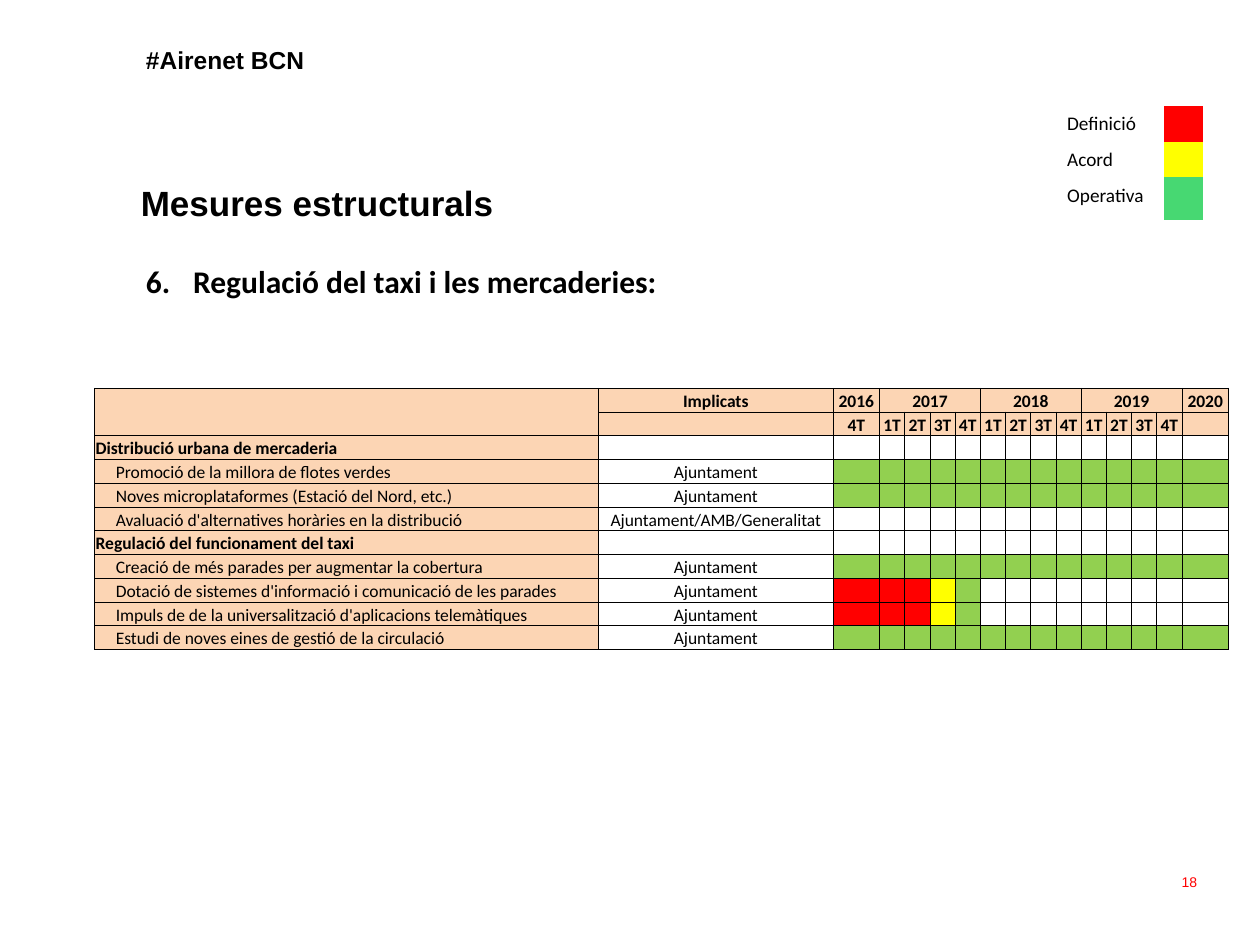
"""Build the slide with the schedule of taxi and freight regulation measures."""
from lxml.etree import SubElement
from pptx import Presentation
from pptx.dml.color import RGBColor
from pptx.enum.text import MSO_ANCHOR, PP_ALIGN
from pptx.oxml.ns import qn
from pptx.util import Pt

THEME = {
    "black": "000000", "red": "FF0000", "yellow": "FFFF00",
    "mint": "47D872", "green": "92D050", "peach": "FCD5B4",
    "heading": "Arial", "body": "Calibri",
    "tag_size": 14, "title_size": 20, "measure_size": 18,
    "legend_size": 11, "table_size": 10, "number_size": 8,
    "no_grid": "{2D5ABB26-0587-4C30-8999-92F81FD0307C}",
}
LEGEND = [("Definició", "red"), ("Acord", "yellow"), ("Operativa", "mint")]
YEARS = [("2016", ["4T"])] + [
    (year, ["1T", "2T", "3T", "4T"]) for year in ("2017", "2018", "2019")
] + [("2020", [""])]
QUARTERS = [quarter for _, quarters in YEARS for quarter in quarters]
ALWAYS = ["green"] * len(QUARTERS)
PHASED = ["red"] * 3 + ["yellow", "green"]
GROUPS = [
    ("Distribució urbana de mercaderia", [
        ("Promoció de la millora de flotes verdes", "Ajuntament", ALWAYS),
        ("Noves microplataformes (Estació del Nord, etc.)", "Ajuntament", ALWAYS),
        ("Avaluació d'alternatives horàries en la distribució",
         "Ajuntament/AMB/Generalitat", []),
    ]),
    ("Regulació del funcionament del taxi", [
        ("Creació de més parades per augmentar la cobertura", "Ajuntament", ALWAYS),
        ("Dotació de sistemes d'informació i comunicació de les parades",
         "Ajuntament", PHASED),
        ("Impuls de de la universalització d'aplicacions telemàtiques",
         "Ajuntament", PHASED),
        ("Estudi de noves eines de gestió de la circulació", "Ajuntament", ALWAYS),
    ]),
]


def put_text(frame, text, size, font="body", color="black", bold=False,
             align=PP_ALIGN.LEFT, spacing=None, number=None):
    """Write one formatted paragraph into a text frame."""
    para = frame.paragraphs[0]
    para.alignment = align
    if spacing:
        para.line_spacing = Pt(spacing)
    if number:
        properties = para._p.get_or_add_pPr()
        properties.set("marL", str(Pt(27)))
        properties.set("indent", str(Pt(-27)))
        SubElement(properties, qn("a:buAutoNum"), type="arabicPeriod", startAt=str(number))
    if not text:
        SubElement(para._p, qn("a:endParaRPr"), sz=str(THEME[size] * 100))
        return
    span = para.add_run()
    span.text = text
    span.font.size = Pt(THEME[size])
    span.font.name = THEME[font]
    span.font.bold = bold
    span.font.color.rgb = RGBColor.from_string(THEME[color])


def add_text(page, place, text, anchor=MSO_ANCHOR.TOP, **style):
    """Add a wrapping text box."""
    frame = page.shapes.add_textbox(*map(Pt, place)).text_frame
    frame.word_wrap = True
    frame.vertical_anchor = anchor
    put_text(frame, text, **style)


def add_grid(page, left, top, widths, heights):
    """Add an unstyled table with the given columns and rows."""
    frame = page.shapes.add_table(len(heights), len(widths), Pt(left), Pt(top),
                                  Pt(sum(widths)), Pt(sum(heights)))
    table = frame.table
    table.first_row = table.horz_banding = False
    table._tbl.tblPr.find(qn("a:tableStyleId")).text = THEME["no_grid"]
    for column, width in zip(table.columns, widths):
        column.width = Pt(width)
    for row, height in zip(table.rows, heights):
        row.height = Pt(height)
    return table


def fill_cell(cell, color):
    """Fill a cell, or leave it clear when no colour is given."""
    if color:
        cell.fill.solid()
        cell.fill.fore_color.rgb = RGBColor.from_string(THEME[color])
    else:
        cell.fill.background()


def add_borders(cell):
    """Draw thin black lines around a cell."""
    for side in ("lnL", "lnR", "lnT", "lnB"):
        line = SubElement(cell._tc.get_or_add_tcPr(), qn(f"a:{side}"), w=str(Pt(0.5)))
        SubElement(SubElement(line, qn("a:solidFill")), qn("a:srgbClr"), val=THEME["black"])


def set_cell(cell, text="", color=None, indent=0.7, **style):
    """Format one cell of the schedule."""
    add_borders(cell)
    fill_cell(cell, color)
    cell.margin_left = Pt(indent)
    cell.margin_right = cell.margin_top = Pt(0.7)
    cell.margin_bottom = Pt(0)
    cell.vertical_anchor = MSO_ANCHOR.BOTTOM
    put_text(cell.text_frame, text, size="table_size", **style)


def add_legend(page):
    """Add the colour key."""
    table = add_grid(page, 602.6, 60.5, [62.6, 22.3], [18, 18, 24.5])
    for row, (label, color) in enumerate(LEGEND):
        for column, (text, fill) in enumerate([(label, None), ("", color)]):
            cell = table.cell(row, column)
            fill_cell(cell, fill)
            put_text(cell.text_frame, text, size="legend_size")


def add_schedule(page):
    """Add the schedule of measures by quarter."""
    years = [text for year, quarters in YEARS for text in [year] + [""] * (len(quarters) - 1)]
    headers = [["", "Implicats"] + years, ["", ""] + QUARTERS]
    lines = []
    for group, tasks in GROUPS:
        lines.append((group, "", [], True))
        lines.extend((*task, False) for task in tasks)
    widths = [288, 134, 26.6] + [14.4] * 12 + [26.6]
    heights = [13.6] * (len(headers) + len(lines))
    table = add_grid(page, 54, 221.8, widths, heights)
    for row, texts in enumerate(headers):
        for column, text in enumerate(texts):
            set_cell(table.cell(row, column), text, color="peach", bold=True,
                     align=PP_ALIGN.CENTER)
    for row, (name, parties, phases, is_group) in enumerate(lines, len(headers)):
        set_cell(table.cell(row, 0), name, color="peach", bold=is_group,
                 indent=0.7 if is_group else 12.2)
        set_cell(table.cell(row, 1), parties, align=PP_ALIGN.CENTER)
        colors = phases + [None] * (len(QUARTERS) - len(phases))
        for column, color in enumerate(colors, 2):
            set_cell(table.cell(row, column), color=color)
    table.cell(0, 0).merge(table.cell(1, 0))
    column = 2
    for _, quarters in YEARS:
        last = column + len(quarters) - 1
        if last > column:
            table.cell(0, column).merge(table.cell(0, last))
        column = last + 1


def main():
    """Create the deck and save it."""
    deck = Presentation()
    deck.slide_width, deck.slide_height = Pt(720), Pt(540)
    page = deck.slides.add_slide(deck.slide_layouts[6])
    add_text(page, (76.3, 15.1, 337.7, 67.7), "#Airenet BCN", size="tag_size",
             font="heading", bold=True, spacing=24)
    add_text(page, (73.4, 100, 292.3, 31.7), "Mesures estructurals", size="title_size",
             font="heading", bold=True, spacing=24)
    add_text(page, (523.4, 489.6, 167.8, 28.8), "18", anchor=MSO_ANCHOR.MIDDLE,
             size="number_size", font="heading", color="red", align=PP_ALIGN.RIGHT)
    add_text(page, (76.3, 146.2, 612, 28.8), "Regulació del taxi i les mercaderies:",
             size="measure_size", bold=True, align=PP_ALIGN.JUSTIFY, number=6)
    add_legend(page)
    add_schedule(page)
    deck.save("out.pptx")


if __name__ == "__main__":
    main()
